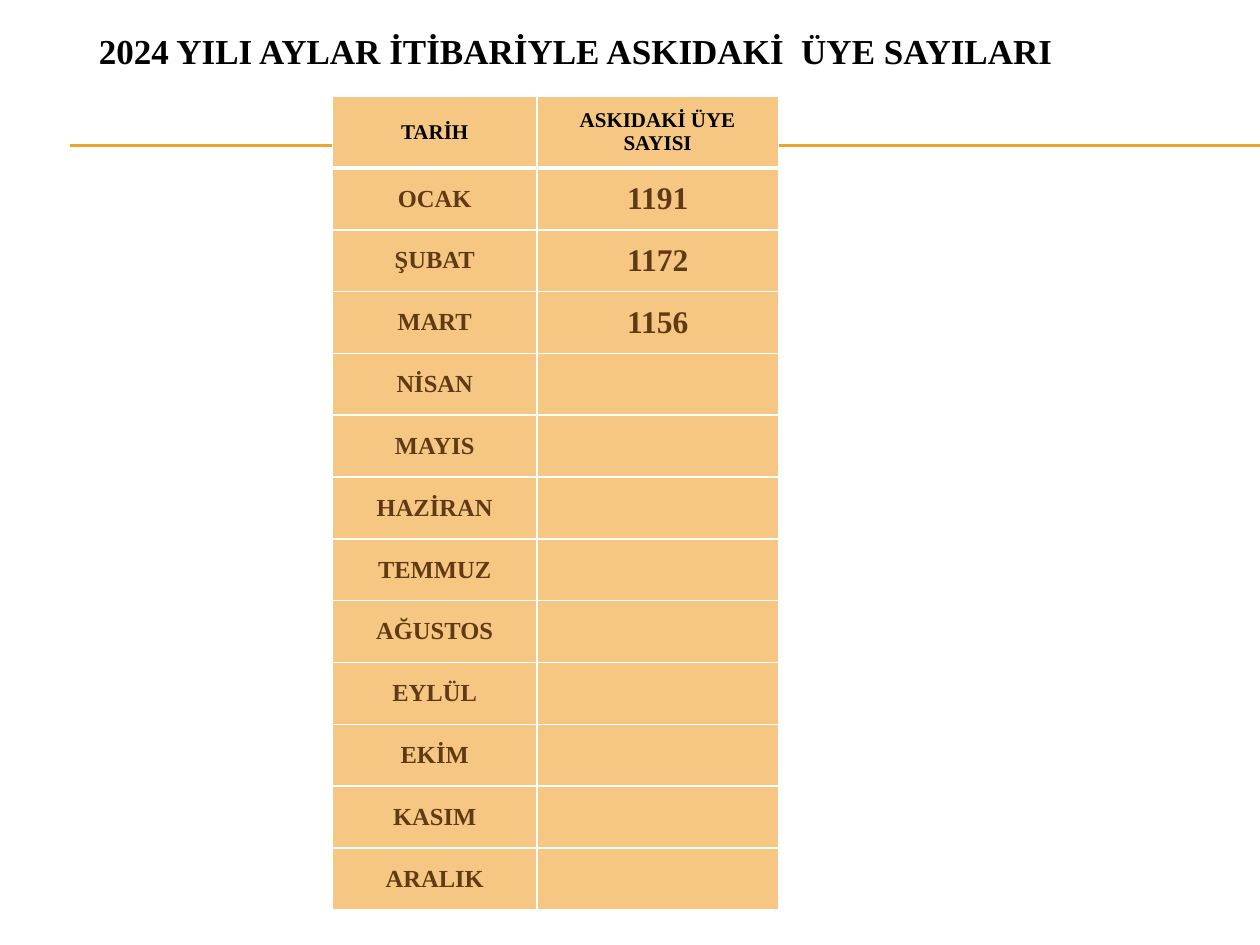
from lxml import etree
from pptx import Presentation
from pptx import util as u
from pptx.dml.color import RGBColor
from pptx.enum import shapes, text
from pptx.oxml import ns

MONTHS = ["OCAK", "ŞUBAT", "MART", "NİSAN", "MAYIS", "HAZİRAN", "TEMMUZ",
          "AĞUSTOS", "EYLÜL", "EKİM", "KASIM", "ARALIK"]
SUSPENDED_MEMBERS = ["1191", "1172", "1156"]


def color(value):
    return RGBColor.from_string(value)


def write(frame, content, size, ink="000000", font="Times New Roman", bold=True):
    frame.word_wrap = True
    frame.vertical_anchor = text.MSO_ANCHOR.MIDDLE
    paragraph = frame.paragraphs[0]
    paragraph.alignment = text.PP_ALIGN.CENTER
    run = paragraph.add_run()
    run.text = content
    run.font.name = font
    run.font.size = u.Pt(size)
    run.font.bold = bold
    run.font.color.rgb = color(ink)


def add_border(cell, side, width, ink):
    properties = cell._tc.get_or_add_tcPr()
    line = etree.SubElement(properties, ns.qn(f"a:ln{side}"), w=str(u.Pt(width)))
    fill = etree.SubElement(line, ns.qn("a:solidFill"))
    etree.SubElement(fill, ns.qn("a:srgbClr"), val=ink)


class MemberSlide:
    accent = "F0A22E"
    cell_fill = "F6C782"
    cell_ink = "603A14"
    border = "FFFFFF"

    def __init__(self, presentation):
        self.slide = presentation.slides.add_slide(presentation.slide_layouts[5])

    def title(self, content, left, top, width, height):
        shape = self.slide.shapes.title
        shape.left, shape.top = u.Pt(left), u.Pt(top)
        shape.width, shape.height = u.Pt(width), u.Pt(height)
        write(shape.text_frame, content, size=20)

    def rule(self, left, right, y):
        line = self.slide.shapes.add_connector(
            shapes.MSO_CONNECTOR.STRAIGHT, u.Pt(left), u.Pt(y), u.Pt(right), u.Pt(y))
        line.line.color.rgb = color(self.accent)
        line.line.width = u.Pt(0.75)
        etree.SubElement(line._element.spPr, ns.qn("a:effectLst"))

    def cell(self, cell, content, size, ink, top=1, bottom=1):
        for side, width in {"L": 1, "R": 1, "T": top, "B": bottom}.items():
            add_border(cell, side, width, self.border)
        cell.fill.solid()
        cell.fill.fore_color.rgb = color(self.cell_fill)
        cell.vertical_anchor = text.MSO_ANCHOR.MIDDLE
        if content:
            write(cell.text_frame, content, size=size, ink=ink)

    def table(self, headers, rows, left, top, widths, header_height, row_height):
        height = header_height + row_height * len(rows)
        table = self.slide.shapes.add_table(
            len(rows) + 1, len(headers), u.Pt(left), u.Pt(top),
            u.Pt(sum(widths)), u.Pt(height)).table
        for column, width in zip(table.columns, widths):
            column.width = u.Pt(width)
        for index, row in enumerate(table.rows):
            row.height = u.Pt(row_height if index else header_height)
        for index, header in enumerate(headers):
            self.cell(table.cell(0, index), header, 12, "000000", bottom=3)
        for index, values in enumerate(rows, start=1):
            for column, (value, size) in enumerate(zip(values, (14, 18))):
                self.cell(table.cell(index, column), value, size, self.cell_ink,
                          top=3 if index == 1 else 1)


def main():
    presentation = Presentation()
    presentation.slide_width, presentation.slide_height = u.Pt(720), u.Pt(540)
    page = MemberSlide(presentation)
    for y in (82.8, 83.5):
        page.rule(40.3, 720, y)
    counts = SUSPENDED_MEMBERS + [""] * (len(MONTHS) - len(SUSPENDED_MEMBERS))
    page.table(["TARİH", "ASKIDAKİ ÜYE SAYISI"], list(zip(MONTHS, counts)),
               left=190, top=55, widths=(116.8, 138), header_height=41, row_height=35.34)
    page.title("2024 YILI AYLAR İTİBARİYLE ASKIDAKİ  ÜYE SAYILARI", 20, 3.6, 618, 51)
    presentation.save("out.pptx")


if __name__ == "__main__":
    main()
